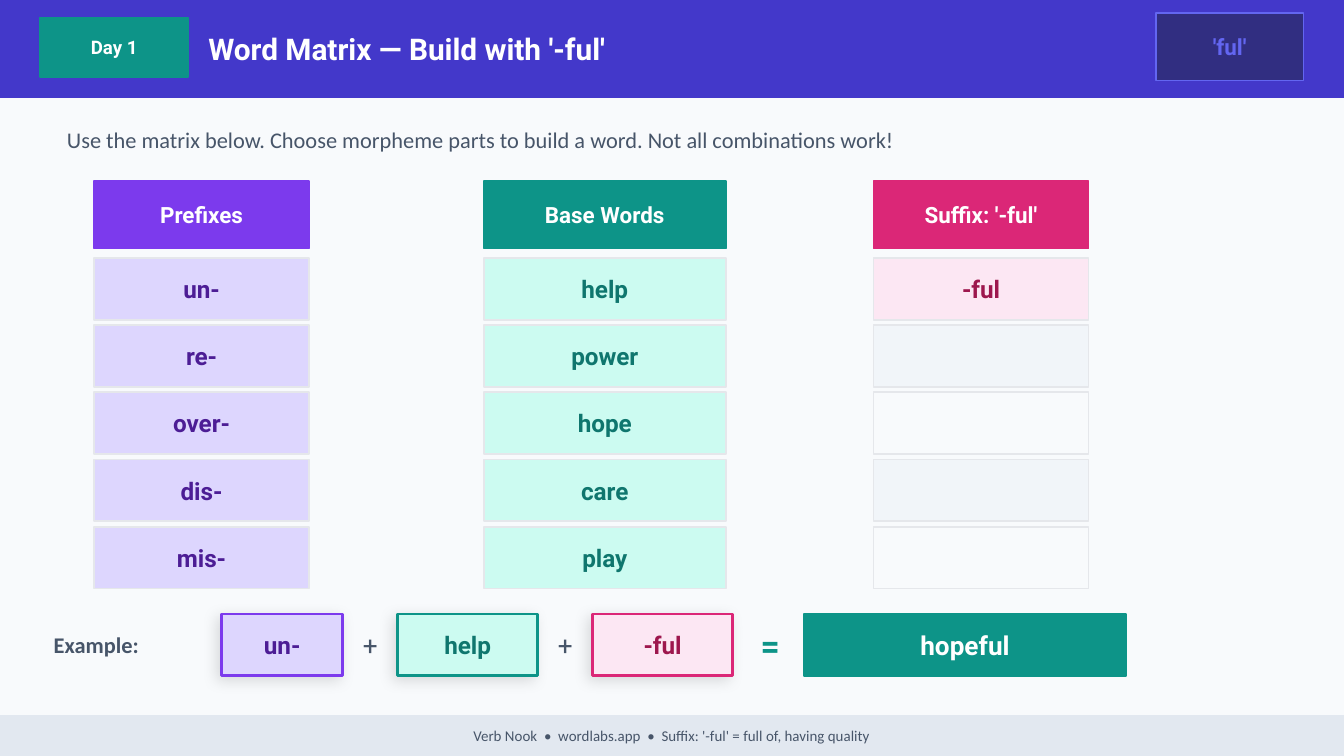
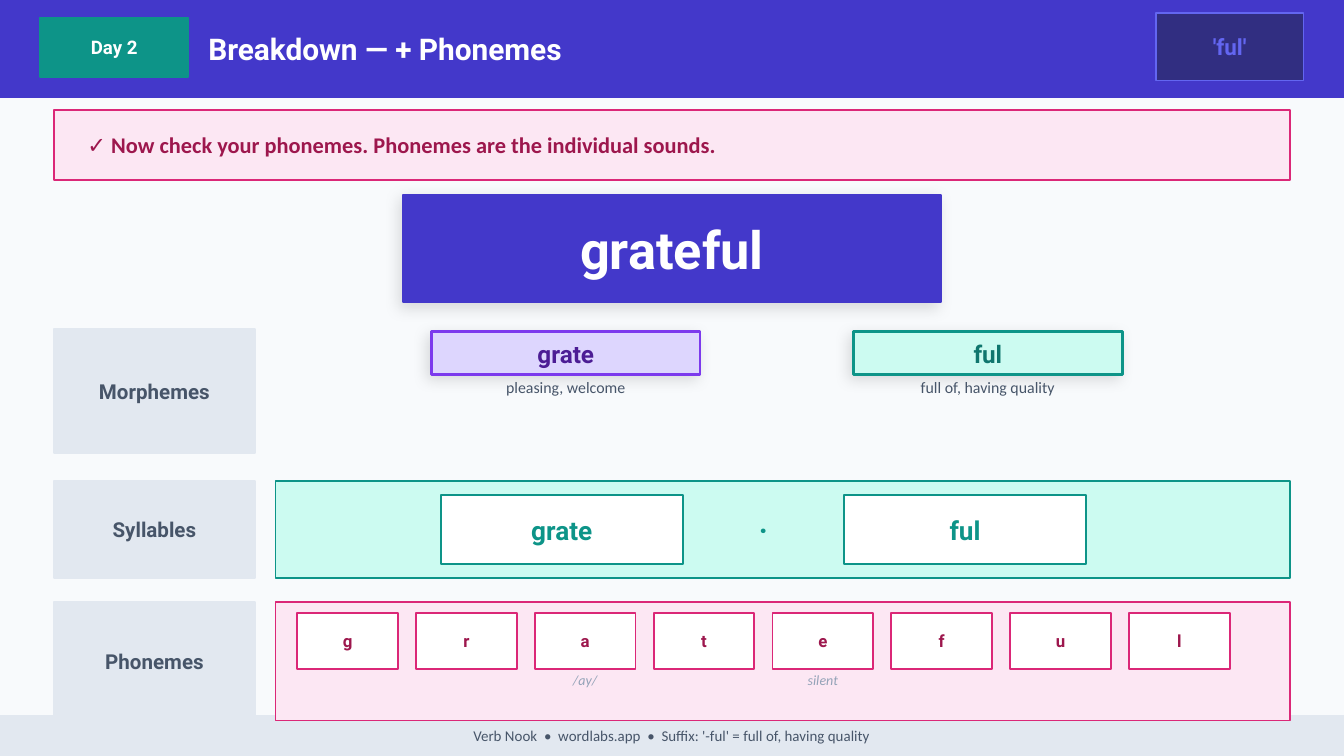
"""Build two word-study slides about the suffix '-ful'."""
from pptx import Presentation
from pptx import oxml
from pptx import util as u
from pptx.dml import color
from pptx.enum import shapes, text
from pptx.oxml import ns

Pt = u.Pt
rgb = color.RGBColor.from_string
LEFT, CENTER = text.PP_ALIGN.LEFT, text.PP_ALIGN.CENTER
TOP, MIDDLE = text.MSO_ANCHOR.TOP, text.MSO_ANCHOR.MIDDLE

PAPER, WHITE, INDIGO, SLATE, MIST = "F8FAFC", "FFFFFF", "4338CA", "475569", "E2E8F0"
STRIPE, RULE, GREY = "F1F5F9", "E5E7EB", "94A3B8"
VIOLET = ("DDD6FE", "7C3AED", "4C1D95")
TEAL = ("CCFBF1", "0D9488", "0F766E")
PINK = ("FCE7F3", "DB2777", "9D174D")
SHADOW = (
    f'<a:outerShdw {ns.nsdecls("a")} blurRad="{Pt(8)}" dist="{Pt(3)}" dir="8100000" '
    'algn="bl" rotWithShape="0"><a:srgbClr val="000000"><a:alpha val="12000"/>'
    '</a:srgbClr></a:outerShdw>'
)


def write(sp, txt, size, ink, font="Roboto", bold=True, italic=False,
          align=CENTER, anchor=MIDDLE, inset=0):
    tf = sp.text_frame
    frame = dict(word_wrap=True, auto_size=text.MSO_AUTO_SIZE.NONE, vertical_anchor=anchor,
                 margin_left=Pt(inset), margin_right=0, margin_top=0, margin_bottom=0)
    for k, v in frame.items():
        setattr(tf, k, v)
    p = tf.paragraphs[0]
    p.alignment = align
    r = p.add_run()
    r.text = txt
    for k, v in dict(name=font, size=Pt(size), bold=bold, italic=italic).items():
        setattr(r.font, k, v)
    r.font.color.rgb = rgb(ink)


def box(s, at, fill=None, line=None, width=1, shadow=False, txt="", size=12, ink=WHITE, **fmt):
    at = [Pt(v) for v in at]
    if fill:
        sp = s.shapes.add_shape(shapes.MSO_SHAPE.RECTANGLE, *at)
        sp.shadow.inherit = False
        sp.fill.solid()
        sp.fill.fore_color.rgb = rgb(fill)
        sp.line.color.rgb = rgb(line or fill)
        sp.line.width = Pt(width)
        if shadow:
            sp.element.spPr.find(ns.qn("a:effectLst")).append(oxml.parse_xml(SHADOW))
    else:
        sp = s.shapes.add_textbox(*at)
    if txt:
        write(sp, txt, size, ink, **fmt)
    return sp


prs = Presentation()
prs.slide_width, prs.slide_height = Pt(720), Pt(405)

slides = []
for day, heading in [("Day 1", "Word Matrix — Build with '-ful'"),
                     ("Day 2", "Breakdown — + Phonemes")]:
    s = prs.slides.add_slide(prs.slide_layouts[5])
    s.background.fill.solid()
    s.background.fill.fore_color.rgb = rgb(PAPER)
    band = box(s, (0, 0, 720, 51.8), INDIGO)
    title = s.shapes.title
    for k, v in dict(left=111.6, top=0, width=583.2, height=51.8).items():
        setattr(title, k, Pt(v))
    write(title, heading, 16, WHITE, align=LEFT)
    band.element.addnext(title.element)
    box(s, (21.6, 9.4, 79.2, 31.7), TEAL[1], txt=day, size=10)
    box(s, (619.2, 7.2, 79.2, 36), "312E81", "6366F1", txt="'ful'", ink="6366F1")
    box(s, (0, 383.4, 720, 21.6), MIST, size=8, ink=SLATE, font="Calibri", bold=False,
        txt="Verb Nook  •  wordlabs.app  •  Suffix: '-ful' = full of, having quality")
    slides.append(s)

s = slides[0]
box(s, (28.8, 59, 662.4, 31.7), ink=SLATE, font="Calibri", bold=False, align=LEFT, inset=7.2,
    txt="Use the matrix below. Choose morpheme parts to build a word. Not all combinations work!")
columns = [
    (50.4, 115.2, "Prefixes", VIOLET, ["un-", "re-", "over-", "dis-", "mis-"]),
    (259.2, 129.6, "Base Words", TEAL, ["help", "power", "hope", "care", "play"]),
    (468, 115.2, "Suffix: '-ful'", PINK, ["-ful", "", "", "", ""]),
]
for x, w, head, (tint, edge, ink), words in columns:
    box(s, (x, 97.2, w, 36), edge, txt=head)
    for i, word in enumerate(words):
        fill = tint if word else (PAPER, STRIPE)[i % 2]
        box(s, (x, 138.2 + 36 * i, w, 33.1), fill, RULE, txt=word, size=13, ink=ink)

y, h = 329, 33.1
box(s, (28.8, y, 86.4, h), txt="Example:", ink=SLATE, font="Calibri", align=LEFT)
for x, w, word, (tint, edge, ink) in [(118.8, 64.8, "un-", VIOLET), (213.1, 74.9, "help", TEAL),
                                      (317.5, 74.9, "-ful", PINK)]:
    box(s, (x, y, w, h), tint, edge, 1.5, True, txt=word, size=13, ink=ink)
for x in (185.8, 290.2):
    box(s, (x, y, 25.2, h), txt="+", size=14, ink=SLATE, bold=False)
box(s, (398.2, y, 28.8, h), txt="=", size=18, ink=TEAL[1])
box(s, (430.6, y, 172.8, h), TEAL[1], txt="hopeful", size=14)

s = slides[1]
box(s, (28.8, 59, 662.4, 37.4), PINK[0], PINK[1], ink=PINK[2], font="Calibri", align=LEFT,
    inset=18, txt="✓ Now check your phonemes. Phonemes are the individual sounds.")
box(s, (216, 104.4, 288, 57.6), INDIGO, shadow=True, txt="grateful", size=28)
for y, h, label, panel in [(176.4, 66.2, "Morphemes", None), (257.8, 51.8, "Syllables", TEAL),
                           (322.6, 63.4, "Phonemes", PINK)]:
    box(s, (28.8, y, 108, h), MIST, txt=label, size=11, ink=SLATE)
    if panel:
        box(s, (147.6, y, 543.6, h), panel[0], panel[1])

parts = [("grate", "pleasing, welcome", VIOLET), ("ful", "full of, having quality", TEAL)]
for i, (part, meaning, (tint, edge, ink)) in enumerate(parts):
    x = 231.1 + 226.1 * i
    box(s, (x, 177.8, 144, 23), tint, edge, 1.5, True, txt=part, size=13, ink=ink)
    box(s, (x, 202.3, 144, 15.8), txt=meaning, size=8.5, ink=SLATE, font="Calibri",
        bold=False, anchor=TOP)
    box(s, (236.2 + 216 * i, 265, 129.6, 37.4), WHITE, TEAL[1], txt=part, size=14, ink=TEAL[1])
box(s, (365.8, 265, 86.4, 37.4), txt="·", size=16, ink=TEAL[1])

hints = {"a": "/ay/", "e": "silent"}
for i, letter in enumerate("grateful"):
    x = 159.2 + 63.65 * i
    box(s, (x, 328.3, 54, 30.2), WHITE, PINK[1], txt=letter, size=9, ink=PINK[2])
    if letter in hints:
        box(s, (x, 360, 54, 17.3), txt=hints[letter], size=7.5, ink=GREY, font="Calibri",
            bold=False, italic=True, anchor=TOP)

prs.save("out.pptx")
